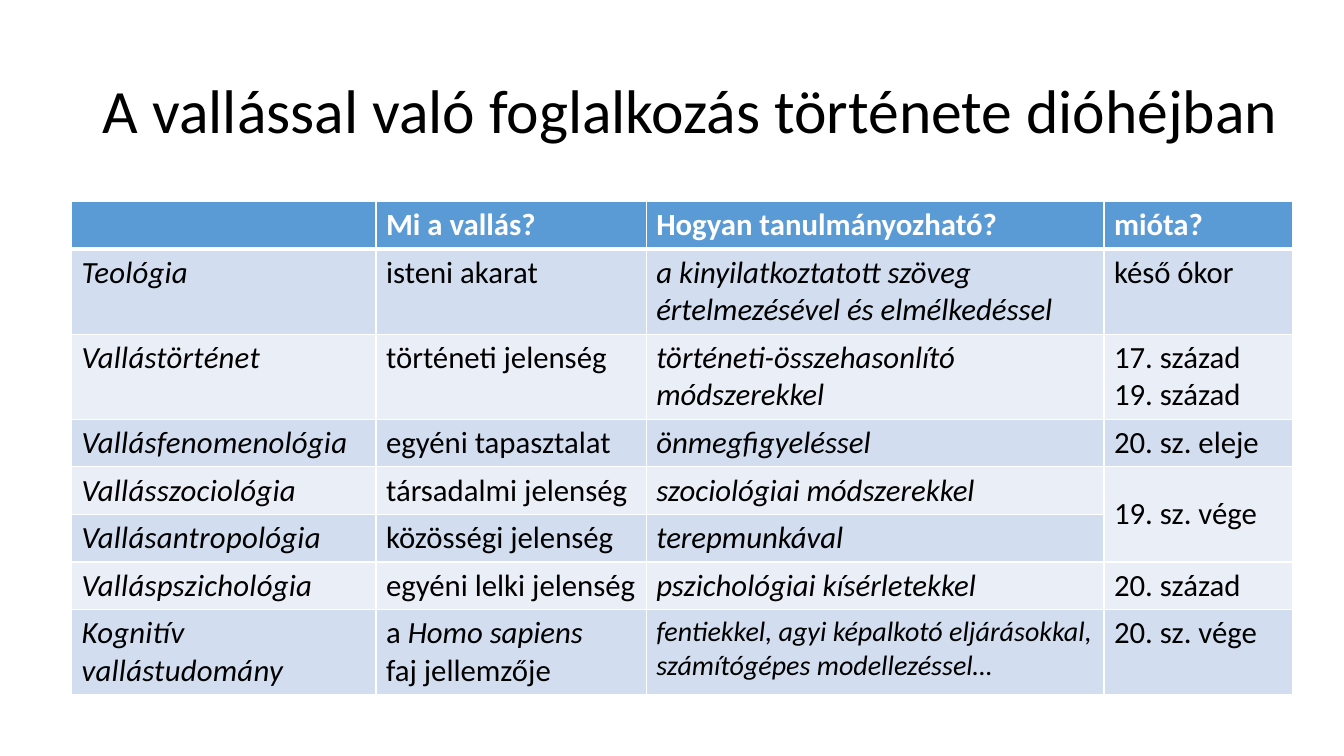
from dataclasses import dataclass

from lxml import etree
from pptx import Presentation
from pptx import util as u
from pptx.dml.color import RGBColor
from pptx.enum import text
from pptx.oxml.ns import qn

COLORS = {
    "header": "5B9BD5",
    "odd": "D2DEEF",
    "even": "EAEFF7",
    "white": "FFFFFF",
    "black": "000000",
}
FONT = "Calibri"
COLUMN_WIDTHS = (3.02, 2.68, 4.54, 1.87)
HEADINGS = ("", "Mi a vallás?", "Hogyan tanulmányozható?", "mióta?")


@dataclass
class Approach:
    name: str
    religion: str
    method: str
    since: str
    method_size: int = 22
    height: float = 0.41


APPROACHES = [
    Approach("Teológia", "isteni akarat",
             "a kinyilatkoztatott szöveg értelmezésével és elmélkedéssel", "késő ókor"),
    Approach("Vallástörténet", "történeti jelenség",
             "történeti-összehasonlító módszerekkel", "17. század\n19. század"),
    Approach("Vallásfenomenológia", "egyéni tapasztalat",
             "önmegfigyeléssel", "20. sz. eleje"),
    Approach("Vallásszociológia", "társadalmi jelenség",
             "szociológiai módszerekkel", "19. sz. vége"),
    Approach("Vallásantropológia", "közösségi jelenség", "terepmunkával", ""),
    Approach("Valláspszichológia", "egyéni lelki jelenség",
             "pszichológiai kísérletekkel", "20. század"),
    Approach("Kognitív vallástudomány", "a *Homo sapiens *\nfaj jellemzője",
             "fentiekkel, agyi képalkotó eljárásokkal, számítógépes modellezéssel…",
             "20. sz. vége", method_size=20, height=0.7),
]


def rgb(name: str) -> RGBColor:
    return RGBColor.from_string(COLORS[name])


def set_font(p, size: int, color: str, bold: bool = False, italic: bool = False) -> None:
    p.font.name = FONT
    p.font.size = u.Pt(size)
    p.font.bold = bold
    p.font.italic = italic
    p.font.color.rgb = rgb(color)


def write_text(p, content: str) -> None:
    for line_number, line in enumerate(content.split("\n")):
        if line_number:
            p.add_line_break()
        for i, part in enumerate(line.split("*")):
            if part:
                r = p.add_run()
                r.text = part
                if i % 2:
                    r.font.italic = True


def set_borders(cell, top: int = 1, bottom: int = 1) -> None:
    tc_pr = cell._tc.get_or_add_tcPr()
    for side, width in (("L", 1), ("R", 1), ("T", top), ("B", bottom)):
        ln = etree.SubElement(tc_pr, qn(f"a:ln{side}"), w=str(u.Pt(width)))
        fill = etree.SubElement(ln, qn("a:solidFill"))
        etree.SubElement(fill, qn("a:srgbClr"), val=COLORS["white"])


def fill_cell(cell, color: str) -> None:
    cell.fill.solid()
    cell.fill.fore_color.rgb = rgb(color)


def add_title(slide) -> None:
    title = slide.shapes.title
    title.left, title.top = u.Inches(0.92), u.Inches(0.4)
    title.width, title.height = u.Inches(12.12), u.Inches(1.45)
    tf = title.text_frame
    tf.auto_size = text.MSO_AUTO_SIZE.NONE
    tf.vertical_anchor = text.MSO_ANCHOR.MIDDLE
    p = tf.paragraphs[0]
    write_text(p, "A vallással való foglalkozás története dióhéjban")
    p.alignment = text.PP_ALIGN.LEFT
    p.line_spacing = 0.9
    set_font(p, 44, "black")


def add_approaches(slide) -> None:
    frame = slide.shapes.add_table(
        len(APPROACHES) + 1, len(COLUMN_WIDTHS),
        u.Inches(0.71), u.Inches(2), u.Inches(12.12), u.Inches(4.83))
    table = frame.table
    for column, width in zip(table.columns, COLUMN_WIDTHS):
        column.width = u.Inches(width)

    table.rows[0].height = u.Inches(0.41)
    for column, heading in enumerate(HEADINGS):
        cell = table.cell(0, column)
        set_borders(cell, bottom=3)
        fill_cell(cell, "header")
        p = cell.text_frame.paragraphs[0]
        write_text(p, heading)
        set_font(p, 22, "white", bold=True)

    for row, approach in enumerate(APPROACHES, start=1):
        table.rows[row].height = u.Inches(approach.height)
        contents = (approach.name, approach.religion, approach.method, approach.since)
        for column, content in enumerate(contents):
            cell = table.cell(row, column)
            set_borders(cell, top=3 if row == 1 else 1)
            fill_cell(cell, "odd" if row % 2 else "even")
            p = cell.text_frame.paragraphs[0]
            write_text(p, content)
            size = approach.method_size if column == 2 else 22
            set_font(p, size, "black", italic=column in (0, 2))
            if column == 0:
                p.font._rPr.set("spc", "20")

    shared_date = table.cell(4, 3)
    shared_date.merge(table.cell(5, 3))
    shared_date.vertical_anchor = text.MSO_ANCHOR.MIDDLE
    frame.height = u.Inches(4.83)


def main() -> None:
    prs = Presentation()
    prs.slide_width, prs.slide_height = u.Inches(13.33), u.Inches(7.5)
    slide = prs.slides.add_slide(prs.slide_layouts[5])
    add_title(slide)
    add_approaches(slide)
    prs.save("out.pptx")


if __name__ == "__main__":
    main()
